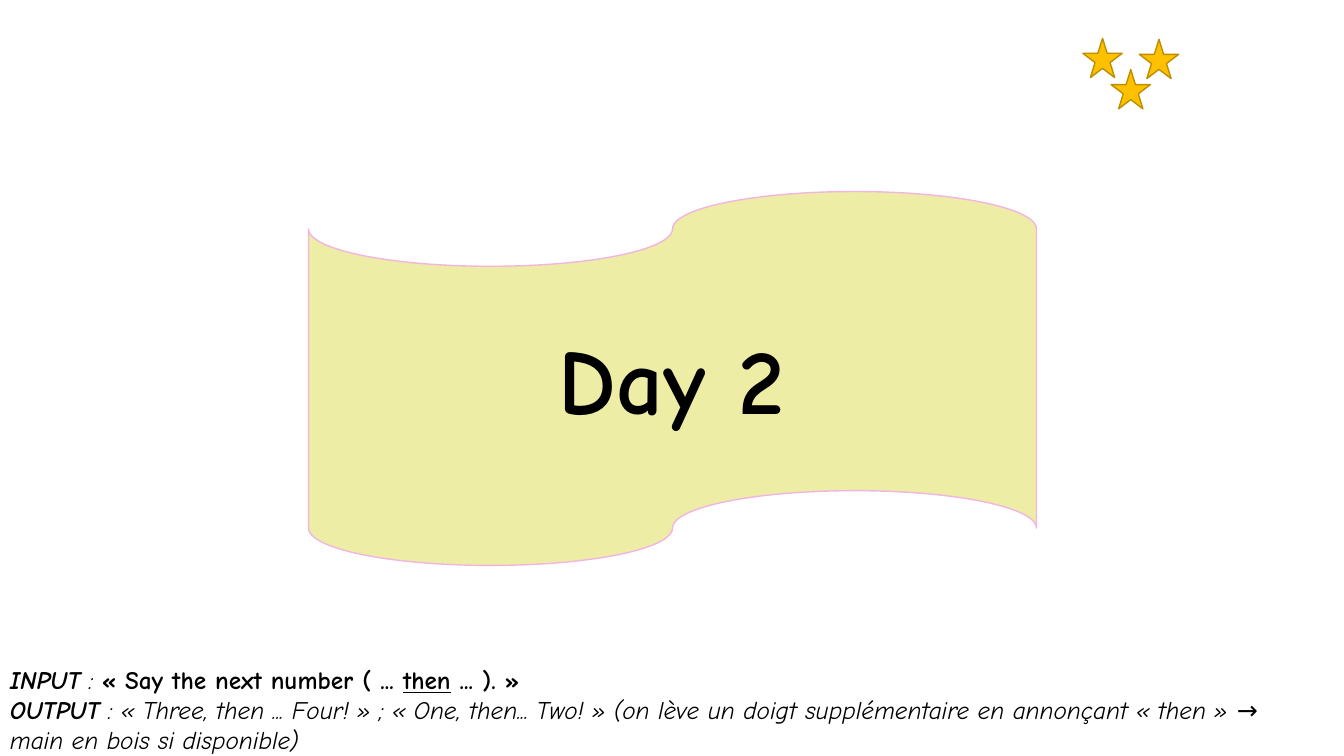
from dataclasses import dataclass

from pptx import Presentation
from pptx.dml.color import RGBColor
from pptx.enum.shapes import MSO_SHAPE
from pptx.enum.text import MSO_ANCHOR, PP_ALIGN
from pptx.util import Inches, Pt

TAPE, RECT, STAR = MSO_SHAPE.FLOWCHART_PUNCHED_TAPE, MSO_SHAPE.RECTANGLE, MSO_SHAPE.STAR_5_POINT
CENTER, MIDDLE = PP_ALIGN.CENTER, MSO_ANCHOR.MIDDLE


@dataclass(frozen=True)
class Theme:
    font: str = "Comic Neue"
    title_size: int = 66
    note_size: int = 18
    text: str = "000000"
    banner: str = "EDEDA6"
    banner_line: str = "F1B5E0"
    star: str = "FFC000"
    star_line: str = "BD8E00"


theme = Theme()


def add_shape(parent, kind, left, top, width, height, fill, line=None):
    sp = parent.add_shape(kind, Inches(left), Inches(top), Inches(width), Inches(height))
    sp.shadow.inherit = False
    sp.fill.solid()
    sp.fill.fore_color.rgb = RGBColor.from_string(fill)
    if line:
        sp.line.color.rgb = RGBColor.from_string(line)
        sp.line.width = Pt(1)
    else:
        sp.line.fill.background()
    return sp


def style_run(r, size, bold=False, italic=False, underline=False):
    r.font.name = theme.font
    r.font.size = Pt(size)
    r.font.color.rgb = RGBColor.from_string(theme.text)
    r.font.bold, r.font.italic, r.font.underline = bold, italic, underline


prs = Presentation()
prs.slide_width, prs.slide_height = Inches(13.33), Inches(7.5)
s = prs.slides.add_slide(prs.slide_layouts[6])

# Banner with the day
banner = s.shapes.add_group_shape()
add_shape(banner.shapes, TAPE, 3.06, 1.9, 7.22, 3.71, theme.banner, theme.banner_line)
day = add_shape(banner.shapes, RECT, 3.23, 3.14, 6.86, 1.21, theme.banner)
tf = day.text_frame
tf.word_wrap = True
tf.vertical_anchor = MIDDLE
tf.text = "Day 2"
p = tf.paragraphs[0]
p.alignment = CENTER
style_run(p.runs[0], theme.title_size, bold=True)

# Three stars
for left, top in ((10.74, 0.38), (11.3, 0.39), (11.02, 0.69)):
    add_shape(s.shapes, STAR, left, top, 0.39, 0.39, theme.star, theme.star_line)

# Teacher's notes: (text, bold, italic, underline)
notes = [
    [
        ("INPUT", True, True, False),
        (" : ", False, True, False),
        ("« Say the next number ( ... ", True, False, False),
        ("then", True, False, True),
        (" ... ). »", True, False, False),
    ],
    [
        ("OUTPUT", True, True, False),
        (" : « Three, then ... Four! » ; « One, then... Two! » (on lève un doigt "
         "supplémentaire en annonçant « then » → main en bois si disponible)",
         False, True, False),
    ],
]
tf = s.shapes.add_textbox(Inches(0), Inches(6.54), Inches(13), Inches(1.01)).text_frame
tf.word_wrap = True
for i, parts in enumerate(notes):
    p = tf.add_paragraph() if i else tf.paragraphs[0]
    for text, bold, italic, underline in parts:
        r = p.add_run()
        r.text = text
        style_run(r, theme.note_size, bold, italic, underline)

prs.save("out.pptx")
